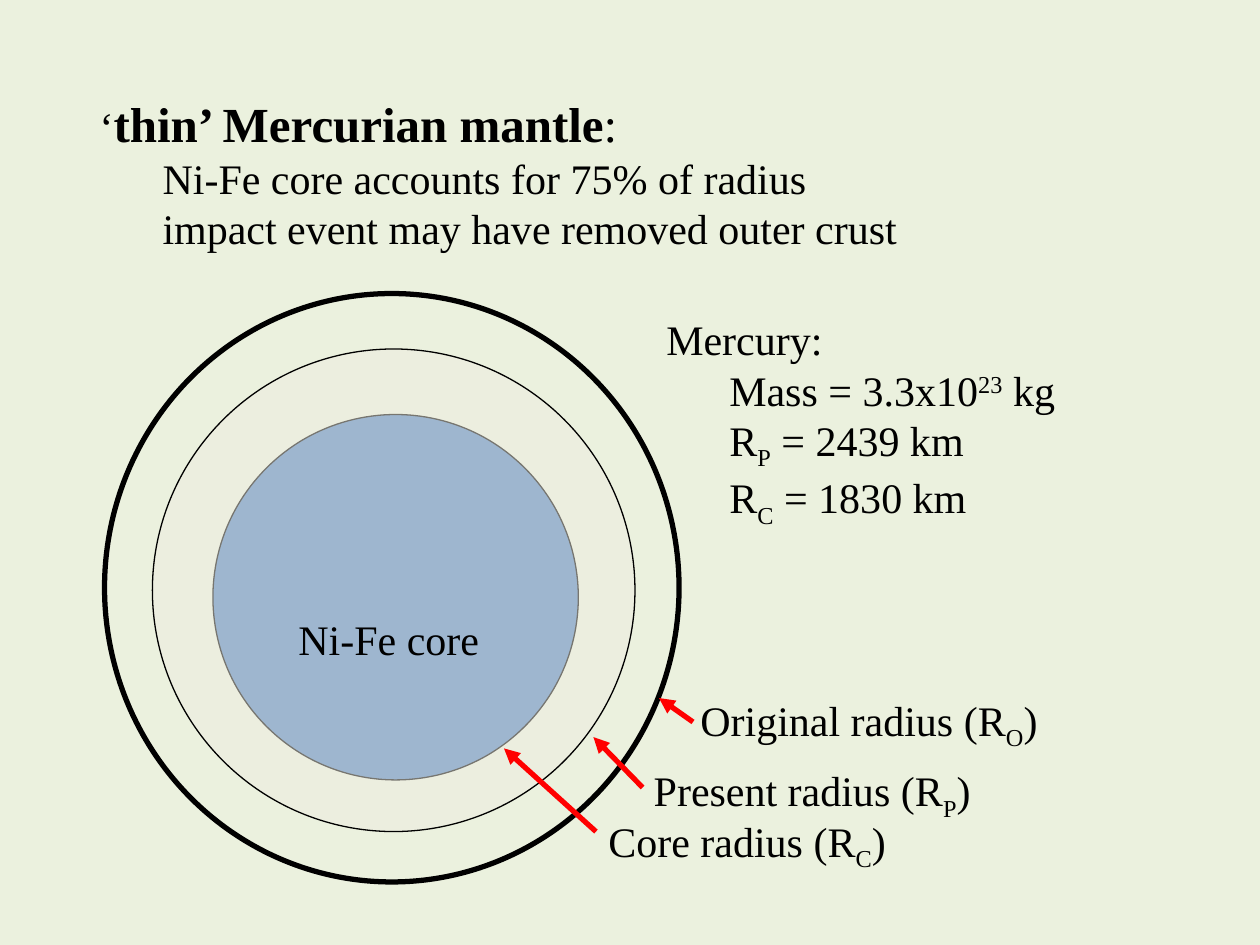
from dataclasses import dataclass

from lxml.etree import SubElement
from pptx import Presentation
from pptx.dml.color import RGBColor
from pptx.enum.shapes import MSO_CONNECTOR, MSO_SHAPE
from pptx.enum.text import MSO_ANCHOR, MSO_AUTO_SIZE, PP_ALIGN
from pptx.oxml.ns import qn
from pptx.util import Emu, Pt

PX = 9144  # 100 px to the inch


@dataclass(frozen=True)
class Theme:
    background: str = "EBF1DE"
    core: str = "4F81BD"
    mantle: str = "EEECE1"
    ink: str = "000000"
    arrow: str = "FF0000"
    font: str = "Times New Roman"
    heading_size: int = 28
    text_size: int = 24
    thin: float = 0.75
    thick: float = 3
    indent: int = 50


THEME = Theme()


def px(value):
    return Emu(value * PX)


def color(value):
    return RGBColor.from_string(value)


def add_run(paragraph, text, size=THEME.text_size, bold=False, baseline=0):
    run = paragraph.add_run()
    run.text = text
    run.font.name = THEME.font
    run.font.size = Pt(size)
    run.font.bold = bold
    run.font.color.rgb = color(THEME.ink)
    if baseline:
        run.font._element.set("baseline", str(baseline * 1000))


def add_tab_stop(paragraph):
    tabs = SubElement(paragraph._p.get_or_add_pPr(), qn("a:tabLst"))
    SubElement(tabs, qn("a:tab"), pos=str(px(THEME.indent)), algn="l")


def write_text(shape, paragraphs, wrap=True):
    """Each paragraph is a list of (text, format) runs."""
    frame = shape.text_frame
    frame.word_wrap = wrap
    frame.auto_size = MSO_AUTO_SIZE.NONE
    frame.vertical_anchor = MSO_ANCHOR.TOP
    for index, runs in enumerate(paragraphs):
        paragraph = frame.add_paragraph() if index else frame.paragraphs[0]
        paragraph.alignment = PP_ALIGN.LEFT
        paragraph.space_before = Pt(0)
        paragraph.line_spacing = 1.0
        if runs[0][0].startswith("\t"):
            add_tab_stop(paragraph)
        for text, style in runs:
            add_run(paragraph, text, **style)


def place(shape, left, top, width, height):
    shape.left, shape.top = px(left), px(top)
    shape.width, shape.height = px(width), px(height)


def add_text(slide, box, paragraphs, wrap=True):
    shape = slide.shapes.add_textbox(*map(px, box))
    write_text(shape, paragraphs, wrap)


def add_circle(slide, box, line_width, fill=None, opacity=100):
    circle = slide.shapes.add_shape(MSO_SHAPE.OVAL, *map(px, box))
    circle.shadow.inherit = False
    circle.line.color.rgb = color(THEME.ink)
    circle.line.width = Pt(line_width)
    if fill is None:
        circle.fill.background()
        return
    circle.fill.solid()
    circle.fill.fore_color.rgb = color(fill)
    if opacity < 100:
        value = circle._element.spPr.find(qn("a:solidFill"))[0]
        SubElement(value, qn("a:alpha"), val=str(opacity * 1000))


def add_arrow(slide, start, end):
    arrow = slide.shapes.add_connector(
        MSO_CONNECTOR.STRAIGHT, *map(px, start + end))
    arrow.line.color.rgb = color(THEME.arrow)
    arrow.line.width = Pt(THEME.thick)
    SubElement(arrow.line._get_or_add_ln(), qn("a:tailEnd"), type="triangle")
    SubElement(arrow._element.spPr, qn("a:effectLst"))


def with_subscript(before, subscript, after):
    return [(before, {}), (subscript, {"baseline": -25}), (after, {})]


def main():
    presentation = Presentation()
    presentation.slide_width, presentation.slide_height = px(1000), px(750)
    slide = presentation.slides.add_slide(presentation.slide_layouts[5])
    slide.background.fill.solid()
    slide.background.fill.fore_color.rgb = color(THEME.background)

    # Heading with its two points
    heading = {"size": THEME.heading_size}
    place(slide.shapes.title, 69, 69, 756, 178)
    write_text(slide.shapes.title, [
        [("‘", {}), ("thin’ Mercurian mantle", {**heading, "bold": True}),
         (":", heading)],
        [("\tNi-Fe core accounts for 75% of radius", {})],
        [("\timpact event may have removed outer crust", {})],
    ])

    # Core, present surface and original surface
    add_circle(slide, (169, 329, 290, 290), THEME.thin, THEME.core)
    add_circle(slide, (121, 277, 383, 383), THEME.thin, THEME.mantle, 50)
    add_circle(slide, (83, 233, 456, 467), THEME.thick)
    add_text(slide, (227, 482, 164, 50), [[("Ni-Fe core", {})]], wrap=False)

    # Planet data
    add_text(slide, (519, 244, 393, 170), [
        [("Mercury:", {})],
        [("\tMass = 3.3x10", {}), ("23", {"baseline": 30}), (" kg", {})],
        with_subscript("\tR", "P", " = 2439 km"),
        with_subscript("\tR", "C", " = 1830 km"),
    ])

    # Radius labels, each with its arrow
    radii = [
        ("Original", "O", (546, 546, 290, 50), (550, 573), (523, 554)),
        ("Present", "P", (509, 602, 273, 50), (510, 625), (471, 585)),
        ("Core", "C", (473, 642, 242, 50), (473, 660), (400, 594)),
    ]
    for name, letter, box, start, end in radii:
        label = with_subscript(f"{name} radius (R", letter, ")")
        add_text(slide, box, [label], wrap=False)
        add_arrow(slide, start, end)

    presentation.save("out.pptx")


if __name__ == "__main__":
    main()
